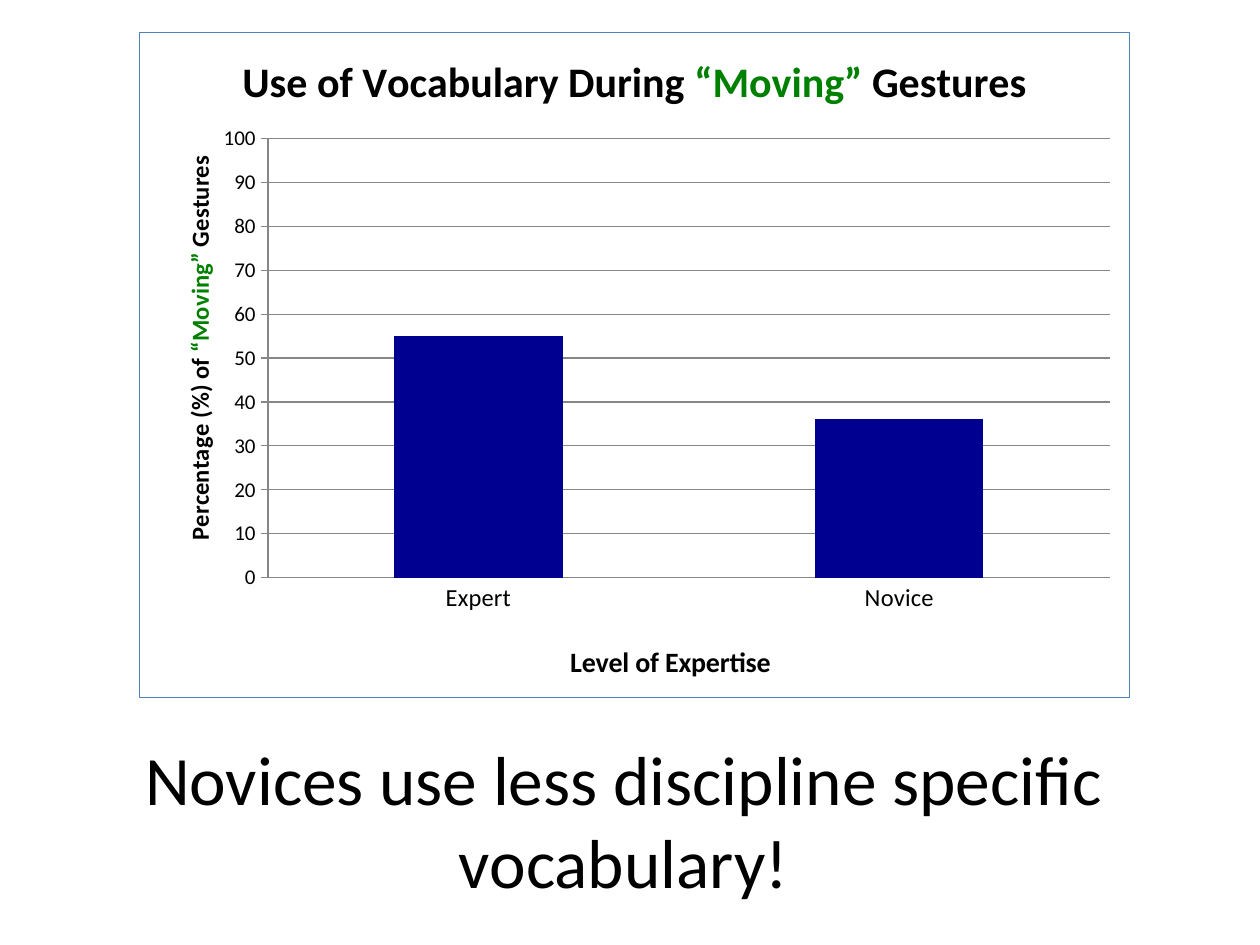
from lxml.etree import fromstring
from pptx import Presentation
from pptx.chart.data import CategoryChartData
from pptx.dml.color import RGBColor
from pptx.enum.chart import XL_CHART_TYPE as CT, XL_TICK_MARK as TM
from pptx.enum.text import MSO_ANCHOR, PP_ALIGN
from pptx.oxml.ns import nsdecls, qn
from pptx.util import Inches, Pt


def rgb(h):
    return RGBColor.from_string(h)


def place(parent, index, **shares):
    for old in parent.findall(qn("c:layout")):
        parent.remove(old)
    target = '<c:layoutTarget val="inner"/>' if "w" in shares else ""
    modes = "".join(f'<c:{k}Mode val="edge"/>' for k in "xy")
    values = "".join(f'<c:{k} val="{v}"/>' for k, v in shares.items())
    parent.insert(index, fromstring(
        f'<c:layout {nsdecls("c")}><c:manualLayout>{target}{modes}{values}'
        '</c:manualLayout></c:layout>'))


prs = Presentation()
prs.slide_width, prs.slide_height = Inches(10), Inches(7.5)
s = prs.slides.add_slide(prs.slide_layouts[6])

data = CategoryChartData()
data.categories = ["Expert", "Novice"]
data.add_series("Series 1", (55, 36))
chart = s.shapes.add_chart(CT.COLUMN_CLUSTERED, Inches(1.1), Inches(0.25),
                           Inches(7.87), Inches(5.29), data).chart
chart.has_legend = False
chart.font.name, chart.font.size = "Calibri", Pt(10)
chart.font.color.rgb = rgb("000000")

plot = chart.plots[0]
plot.gap_width, plot.vary_by_categories = 150, False
fill = plot.series[0].format.fill
fill.solid()
fill.fore_color.rgb = rgb("000090")

cat, val = chart.category_axis, chart.value_axis
val.minimum_scale, val.maximum_scale, val.major_unit = 0, 100, 10
val.has_major_gridlines = True
cat.major_tick_mark, val.major_tick_mark = TM.NONE, TM.CROSS
for axis, size in ((cat, 14), (val, 12)):
    axis.tick_labels.font.size = Pt(size)
for line in (cat.format.line, val.format.line, val.major_gridlines.format.line):
    line.color.rgb = rgb("868686")
    line.width = Pt(0.75)

titles = (
    (chart.chart_title, 24, ["Use of Vocabulary During ", "“Moving”", " Gestures"]),
    (cat.axis_title, 16, ["Level of Expertise"]),
    (val.axis_title, 14, ["Percentage (%) of ", "“Moving”", " Gestures"]),
)
for title, size, words in titles:
    p = title.text_frame.paragraphs[0]
    p.font.size, p.font.bold = Pt(size), True
    for word in words:
        r = p.add_run()
        r.text = word
        r.font.name, r.font.size, r.font.bold = "Calibri", Pt(size), True
        r.font.color.rgb = rgb("008000" if word == "“Moving”" else "000000")

body = val.axis_title._element.find(".//" + qn("a:bodyPr"))
body.set("rot", "-5400000")
body.set("vert", "horz")
place(cat.axis_title._element, 1, x=0.43, y=0.91)
place(val.axis_title._element, 1, x=0.04, y=0.18)

space = chart._chartSpace
place(space.chart.plotArea, 0, x=0.13, y=0.16, w=0.85, h=0.66)
space.chart.addnext(fromstring(
    f'<c:spPr {nsdecls("c", "a")}><a:ln w="{Pt(0.75)}"><a:solidFill>'
    '<a:srgbClr val="4F81BD"/></a:solidFill></a:ln></c:spPr>'))

tf = s.shapes.add_textbox(Inches(0.45), Inches(5.88), Inches(9), Inches(1.25)).text_frame
tf.word_wrap = True
tf.vertical_anchor = MSO_ANCHOR.MIDDLE
p = tf.paragraphs[0]
p.text = "Novices use less discipline specific vocabulary!"
p.alignment = PP_ALIGN.CENTER
p.font.name, p.font.size = "Calibri", Pt(39.6)
p.font.color.rgb = rgb("000000")

prs.save("out.pptx")
